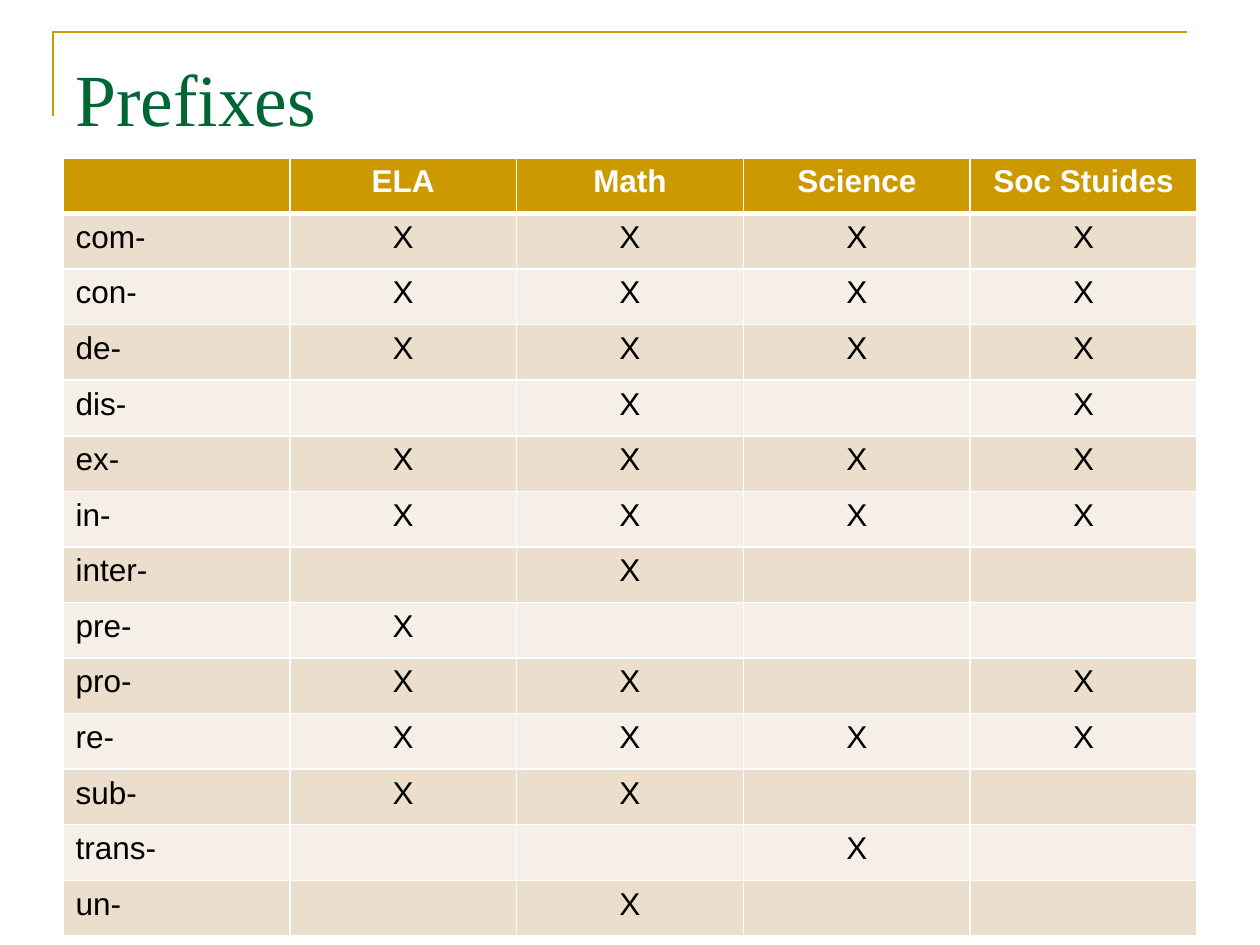
from dataclasses import dataclass

from lxml import etree
from pptx import Presentation
from pptx.dml.color import RGBColor
from pptx.enum.text import MSO_ANCHOR, PP_ALIGN
from pptx.oxml.ns import qn
from pptx.util import Emu, Pt

LEFT, CENTER = PP_ALIGN.LEFT, PP_ALIGN.CENTER
TOP = MSO_ANCHOR.TOP
EMU_PER_PX = 914400 / 126


@dataclass(frozen=True)
class Theme:
    gold: str = "CC9900"
    green: str = "006633"
    white: str = "FFFFFF"
    black: str = "000000"
    bands: tuple = ("ECDECC", "F6EFE7")
    title_font: str = "Times New Roman"
    body_font: str = "Arial"
    title_size: int = 42
    body_size: int = 18
    rule_width: float = 1.5
    border_width: int = 1
    header_border_width: int = 3


def px(n):
    return Emu(round(n * EMU_PER_PX))


def rgb(color):
    return RGBColor.from_string(color)


class SlideBuilder:
    def __init__(self, s, theme):
        self.s = s
        self.theme = theme

    def style(self, p, font, size, color, bold=False, align=LEFT):
        p.alignment = align
        for r in p.runs:
            r.font.name = font
            r.font.size = Pt(size)
            r.font.bold = bold
            r.font.color.rgb = rgb(color)

    def rule(self, points):
        """Open line through the given points."""
        fb = self.s.shapes.build_freeform(*points[0], scale=EMU_PER_PX)
        fb.add_line_segments(points[1:], close=False)
        sp = fb.convert_to_shape()
        sp.shadow.inherit = False
        sp.fill.background()
        sp.line.color.rgb = rgb(self.theme.gold)
        sp.line.width = Pt(self.theme.rule_width)

    def title(self, text, x, y, w, h):
        t = self.theme
        tf = self.s.shapes.add_textbox(px(x), px(y), px(w), px(h)).text_frame
        tf.word_wrap = True
        tf.vertical_anchor = TOP
        tf.margin_top = px(15)
        tf.text = text
        self.style(tf.paragraphs[0], t.title_font, t.title_size, t.green)

    def borders(self, cell, widths):
        """Draw the left, right, top and bottom edges, ahead of the fill."""
        tc_pr = cell._tc.get_or_add_tcPr()
        for i, (side, width) in enumerate(zip("LRTB", widths)):
            ln = etree.Element(qn(f"a:ln{side}"), w=str(Pt(width)))
            fill = etree.SubElement(ln, qn("a:solidFill"))
            etree.SubElement(fill, qn("a:srgbClr"), val=self.theme.white)
            tc_pr.insert(i, ln)

    def table(self, rows, x, y, w, h):
        t = self.theme
        table = self.s.shapes.add_table(
            len(rows), len(rows[0]), px(x), px(y), px(w), px(h)).table
        thin, thick = t.border_width, t.header_border_width
        for i, row in enumerate(rows):
            header = i == 0
            fill = t.gold if header else t.bands[(i - 1) % 2]
            color = t.white if header else t.black
            top = thick if i == 1 else thin
            bottom = thick if header else thin
            for j, text in enumerate(row):
                cell = table.cell(i, j)
                cell.fill.solid()
                cell.fill.fore_color.rgb = rgb(fill)
                self.borders(cell, (thin, thin, top, bottom))
                cell.text_frame.text = text
                self.style(cell.text_frame.paragraphs[0], t.body_font,
                           t.body_size, color, header, CENTER if j else LEFT)


SUBJECTS = ["ELA", "Math", "Science", "Soc Stuides"]
PREFIX_SUBJECTS = {
    "com-": SUBJECTS,
    "con-": SUBJECTS,
    "de-": SUBJECTS,
    "dis-": ["Math", "Soc Stuides"],
    "ex-": SUBJECTS,
    "in-": SUBJECTS,
    "inter-": ["Math"],
    "pre-": ["ELA"],
    "pro-": ["ELA", "Math", "Soc Stuides"],
    "re-": SUBJECTS,
    "sub-": ["ELA", "Math"],
    "trans-": ["Science"],
    "un-": ["Math"],
}


def main():
    prs = Presentation()
    prs.slide_width, prs.slide_height = px(1260), px(945)
    s = prs.slides.add_slide(prs.slide_layouts[6])
    b = SlideBuilder(s, Theme())

    # Corner rule and title
    b.rule([(53, 116), (53, 32), (1187, 32)])
    b.title("Prefixes", 63, 38, 1134, 158)

    # Prefixes by subject
    rows = [[""] + SUBJECTS]
    for prefix, used in PREFIX_SUBJECTS.items():
        rows.append([prefix] + ["X" if n in used else "" for n in SUBJECTS])
    b.table(rows, 63, 158, 1134, 778)

    prs.save("out.pptx")


if __name__ == "__main__":
    main()
